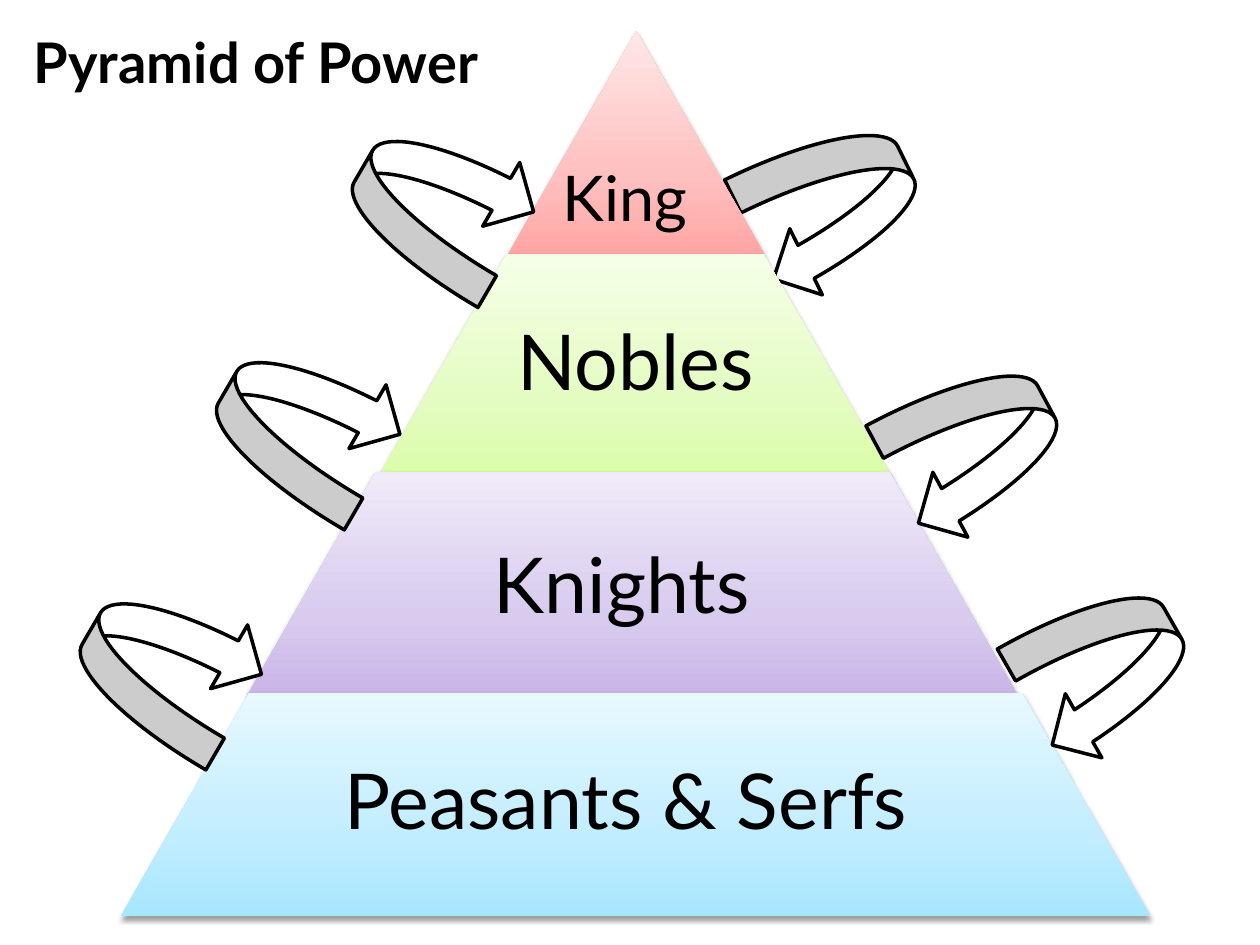
from pptx import Presentation
from pptx.dml.color import RGBColor
from pptx.enum.shapes import MSO_SHAPE
from pptx.enum.text import MSO_ANCHOR, MSO_AUTO_SIZE, PP_ALIGN
from pptx.oxml import parse_xml
from pptx.oxml.ns import nsdecls
from pptx.util import Pt

PX = 9144
TRAP = MSO_SHAPE.TRAPEZOID
CURVE = MSO_SHAPE.CURVED_LEFT_ARROW
MIDDLE, BOTTOM = MSO_ANCHOR.MIDDLE, MSO_ANCHOR.BOTTOM
CENTER, LEFT = PP_ALIGN.CENTER, PP_ALIGN.LEFT
GROW = MSO_AUTO_SIZE.SHAPE_TO_FIT_TEXT

FONT = "Lato"
COLORS = {
    "ink": "000000",
    "paper": "FFFFFF",
    "king": ("FFA6A5", "FFC0BF", "FFE7E7"),
    "nobles": ("DAFDA7", "E4FCC2", "F5FFE7"),
    "knights": ("C9B5E8", "D8CBEE", "F0EAF9"),
    "serfs": ("A7E6FF", "C1EDFF", "E7F8FF"),
}
STOPS = (0, 35, 100)

# name, words, tier box, label box, size, anchor, label insets
TIERS = [
    ("king", "King", (403, 25, 204, 177), (403, 25, 204, 177), 36, BOTTOM, (5, 5, 23, 15)),
    ("nobles", "Nobles", (300, 202, 408, 177), (372, 202, 265, 177), 44, MIDDLE, (6, 6, 6, 6)),
    ("knights", "Knights", (196, 375, 612, 177), (303, 375, 398, 177), 44, MIDDLE, (6, 14, 23, 6)),
    ("serfs", "Peasants & Serfs", (96, 550, 817, 177), (239, 550, 531, 177), 44, MIDDLE, (6, 6, 21, 6)),
]
BACK = ((594, 107, 135, 117), 333.8)
LOOPS = [
    ((707, 299, 135, 117), 331.7),
    ((812, 475, 131, 117), 330.3),
    ((283, 101, 135, 117), 210.2),
    ((175, 277, 137, 117), 210.2),
    ((67, 468, 135, 117), 210.2),
]


def emu(box):
    """Turn px lengths into EMU."""
    return [n * PX for n in box]


def rgb(name):
    """Look up a plain colour."""
    return RGBColor.from_string(COLORS[name])


def add_text(slide, box, words, size, align, anchor, pads, bold=False):
    """Add one line of text in the box and return its frame."""
    frame = slide.shapes.add_textbox(*emu(box)).text_frame
    frame.word_wrap = True
    frame.vertical_anchor = anchor
    (frame.margin_left, frame.margin_top,
     frame.margin_right, frame.margin_bottom) = emu(pads)
    para = frame.paragraphs[0]
    para.text = words
    para.alignment = align
    para.font.name = FONT
    para.font.size = Pt(size)
    para.font.bold = bold
    para.font.color.rgb = rgb("ink")
    return frame


def add_title(slide, box):
    """Add the bold heading."""
    frame = add_text(slide, box, "Pyramid of Power", 32, LEFT,
                     MSO_ANCHOR.TOP, (10, 5, 10, 5), True)
    frame.auto_size = GROW


def add_tier(slide, name, words, box, label, size, anchor, pads):
    """Add one shaded layer of the pyramid with its label."""
    tier = slide.shapes.add_shape(TRAP, *emu(box))
    tier.adjustments[0] = 0.576
    stops = "".join(
        f'<a:gs pos="{pos * 1000}"><a:srgbClr val="{tint}"/></a:gs>'
        for pos, tint in zip(STOPS, COLORS[name]))
    props = tier.element.spPr
    props.append(parse_xml(
        f'<a:gradFill {nsdecls("a")} rotWithShape="1"><a:gsLst>{stops}</a:gsLst>'
        '<a:lin ang="16200000" scaled="0"/></a:gradFill>'))
    tier.line.fill.background()
    props.append(parse_xml(
        f'<a:effectLst {nsdecls("a")}><a:outerShdw blurRad="40000" dist="20000" '
        f'dir="5400000" rotWithShape="0"><a:srgbClr val="{COLORS["ink"]}">'
        '<a:alpha val="38000"/></a:srgbClr></a:outerShdw></a:effectLst>'))
    add_text(slide, label, words, size, CENTER, anchor, pads).paragraphs[0].line_spacing = 0.9


def add_loop(slide, box, turn):
    """Add one curved arrow between two layers."""
    loop = slide.shapes.add_shape(CURVE, *emu(box))
    loop.rotation = turn
    loop.shadow.inherit = False
    loop.fill.solid()
    loop.fill.fore_color.rgb = rgb("paper")
    loop.line.color.rgb = rgb("ink")
    loop.line.width = Pt(2)


def main():
    """Build and save the slide."""
    deck = Presentation()
    deck.slide_width, deck.slide_height = emu((1000, 750))
    slide = deck.slides.add_slide(deck.slide_layouts[6])
    add_title(slide, (17, 17, 433, 64))
    add_loop(slide, *BACK)
    for tier in TIERS:
        add_tier(slide, *tier)
    for loop in LOOPS:
        add_loop(slide, *loop)
    deck.save("out.pptx")


if __name__ == "__main__":
    main()
